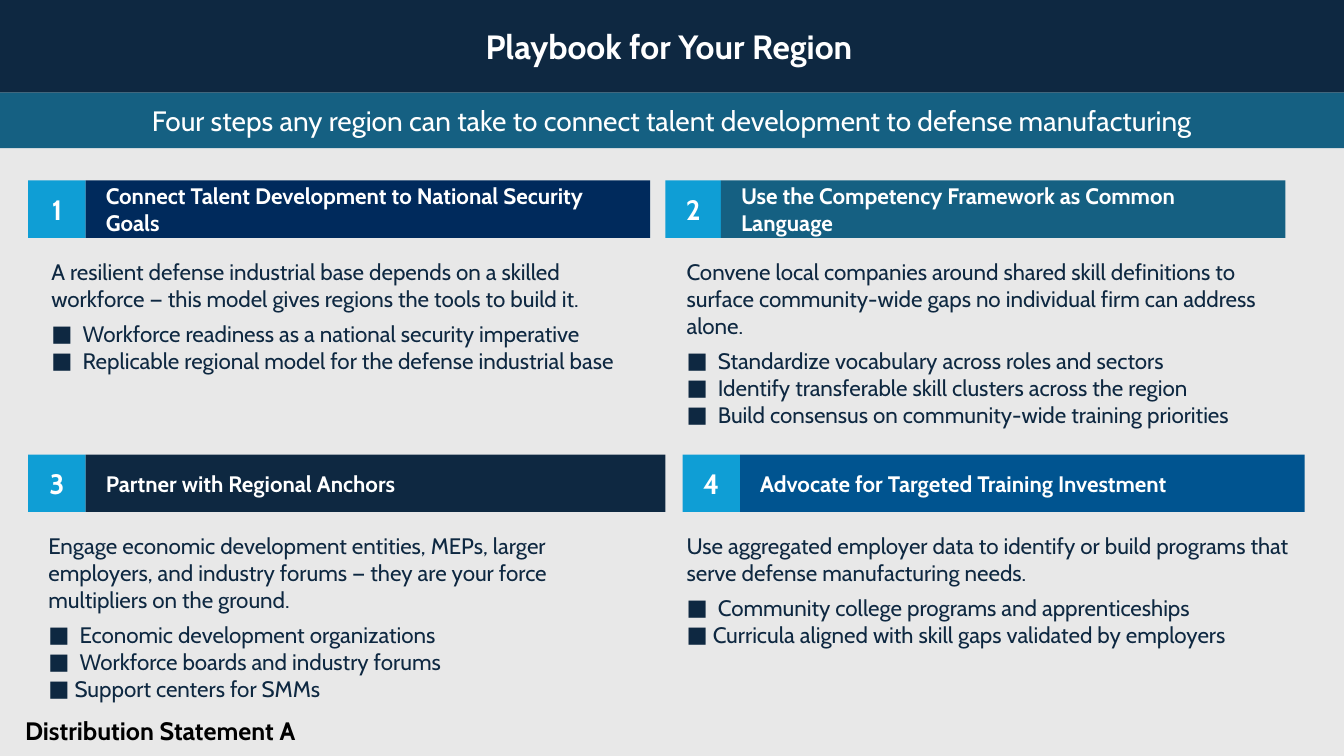
from dataclasses import dataclass

from lxml.etree import SubElement
from pptx import Presentation
from pptx.dml.color import RGBColor
from pptx.enum.shapes import MSO_SHAPE as Shape
from pptx.enum.text import MSO_ANCHOR as Anchor, MSO_AUTO_SIZE as AutoSize, PP_ALIGN as Align
from pptx.oxml.ns import qn
from pptx.util import Inches, Pt


@dataclass(frozen=True)
class Theme:
    font: str = "Cabin"
    page: str = "E8E8E8"
    ink: str = "0E2841"
    teal: str = "156082"
    navy: str = "002A5C"
    blue: str = "005490"
    sky: str = "0F9ED5"
    white: str = "FFFFFF"
    black: str = "000000"
    title: int = 24
    lead: int = 20
    footer: int = 18
    body: int = 16


@dataclass(frozen=True)
class Step:
    color: str
    heading: str
    intro: str
    bullets: tuple
    shift: float = 0
    badge_w: float = 0.57
    bar_w: float = 5.6
    body_shift: float = 0.01
    body_w: float = 6.17
    last_hang: float = 0.31


T = Theme()
SLIDE_W, SLIDE_H = 13.33, 7.5
TITLE_H, SUBTITLE_H = 0.92, 0.55
GRID_LEFT, GRID_TOP = 0.28, 1.79
COL_PITCH, ROW_PITCH = 6.32, 2.72
BAR_H, BODY_H = 0.57, 2.08
HANG = 0.31
BAND_INSETS = (0.2, 0.05, 0.2, 0.05)
BODY_INSETS = (0.2, 0.2, 0.2, 0.1)

STEPS = (
    Step(T.navy, "Connect Talent Development to National Security Goals",
         "A resilient defense industrial base depends on a skilled workforce — "
         "this model gives regions the tools to build it.",
         ("Workforce readiness as a national security imperative",
          "Replicable regional model for the defense industrial base"),
         body_shift=0.03),
    Step(T.teal, "Use the Competency Framework as Common Language",
         "Convene local companies around shared skill definitions to surface "
         "community-wide gaps no individual firm can address alone.",
         ("Standardize vocabulary across roles and sectors",
          "Identify transferable skill clusters across the region",
          "Build consensus on community-wide training priorities"),
         badge_w=0.55),
    Step(T.ink, "Partner with Regional Anchors",
         "Engage economic development entities, MEPs, larger employers, and "
         "industry forums — they are your force multipliers on the ground.",
         ("Economic development organizations",
          "Workforce boards and industry forums",
          "Support centers for SMMs"),
         bar_w=5.75, body_shift=0, last_hang=0.26),
    Step(T.blue, "Advocate for Targeted Training Investment",
         "Use aggregated employer data to identify or build programs that "
         "serve defense manufacturing needs.",
         ("Community college programs and apprenticeships",
          "Curricula aligned with skill gaps validated by employers"),
         shift=0.17, body_w=6.82, last_hang=0.26),
)


def rgb(color):
    return RGBColor.from_string(color)


def add_run(p, text, size, color, bold=False):
    r = p.add_run()
    r.text = text
    f = r.font
    f.name, f.size, f.bold = T.font, Pt(size), bold
    f.color.rgb = rgb(color)


def set_frame(tf, insets, anchor):
    tf.word_wrap = True
    tf.auto_size = AutoSize.NONE
    tf.vertical_anchor = anchor
    tf.margin_left, tf.margin_top, tf.margin_right, tf.margin_bottom = map(Inches, insets)


def format_band(sp, fill, text, size, bold=True, align=Align.CENTER, insets=BAND_INSETS):
    sp.fill.solid()
    sp.fill.fore_color.rgb = rgb(fill)
    sp.line.fill.background()
    set_frame(sp.text_frame, insets, Anchor.MIDDLE)
    p = sp.text_frame.paragraphs[0]
    p.alignment = align
    add_run(p, text, size, T.white, bold)


def add_band(s, box, *args, **kwargs):
    sp = s.shapes.add_shape(Shape.RECTANGLE, *map(Inches, box))
    sp.shadow.inherit = False
    format_band(sp, *args, **kwargs)


def add_text_box(s, box, insets, anchor):
    tf = s.shapes.add_textbox(*map(Inches, box)).text_frame
    set_frame(tf, insets, anchor)
    return tf


def add_bullet(tf, text, hang):
    p = tf.add_paragraph()
    pPr = p._p.get_or_add_pPr()
    pPr.set("marL", str(Inches(hang)))
    pPr.set("indent", str(-Inches(hang)))
    SubElement(pPr, qn("a:buFont"), typeface=T.font)
    SubElement(pPr, qn("a:buChar"), char="■")
    add_run(p, text, T.body, T.ink)


def add_title(s, text):
    sp = s.shapes.title
    sp.left, sp.top, sp.width, sp.height = map(Inches, (-0.07, 0, SLIDE_W + 0.08, TITLE_H))
    format_band(sp, T.ink, text, T.title)


def add_step(s, index, step):
    row, col = divmod(index, 2)
    left, top = GRID_LEFT + col * COL_PITCH, GRID_TOP + row * ROW_PITCH
    badge_left = left + step.shift
    add_band(s, (badge_left, top, step.badge_w, BAR_H), T.sky, str(index + 1), T.lead,
             insets=(0, 0, 0, 0))
    add_band(s, (badge_left + step.badge_w, top, step.bar_w, BAR_H), step.color,
             step.heading, T.body, align=Align.LEFT)
    tf = add_text_box(s, (left + step.body_shift, top + BAR_H, step.body_w, BODY_H),
                      BODY_INSETS, Anchor.TOP)
    p = tf.paragraphs[0]
    p.space_after = Pt(6)
    add_run(p, step.intro, T.body, T.ink)
    for text in step.bullets[:-1]:
        add_bullet(tf, text, HANG)
    add_bullet(tf, step.bullets[-1], step.last_hang)


def add_footer(s, text):
    tf = add_text_box(s, (0.15, 7.03, 7.14, 0.42), (0.1, 0.05, 0.1, 0.05), Anchor.BOTTOM)
    p = tf.paragraphs[0]
    p.line_spacing = 0.9
    add_run(p, text, T.footer, T.black, True)


def main():
    prs = Presentation()
    prs.slide_width, prs.slide_height = Inches(SLIDE_W), Inches(SLIDE_H)
    s = prs.slides.add_slide(prs.slide_layouts[5])
    s.background.fill.solid()
    s.background.fill.fore_color.rgb = rgb(T.page)
    add_title(s, "Playbook for Your Region")
    add_band(s, (0, TITLE_H, SLIDE_W, SUBTITLE_H), T.teal,
             "Four steps any region can take to connect talent development to defense manufacturing",
             T.lead, bold=False)
    for index, step in enumerate(STEPS):
        add_step(s, index, step)
    add_footer(s, "Distribution Statement A")
    prs.save("out.pptx")


if __name__ == "__main__":
    main()
